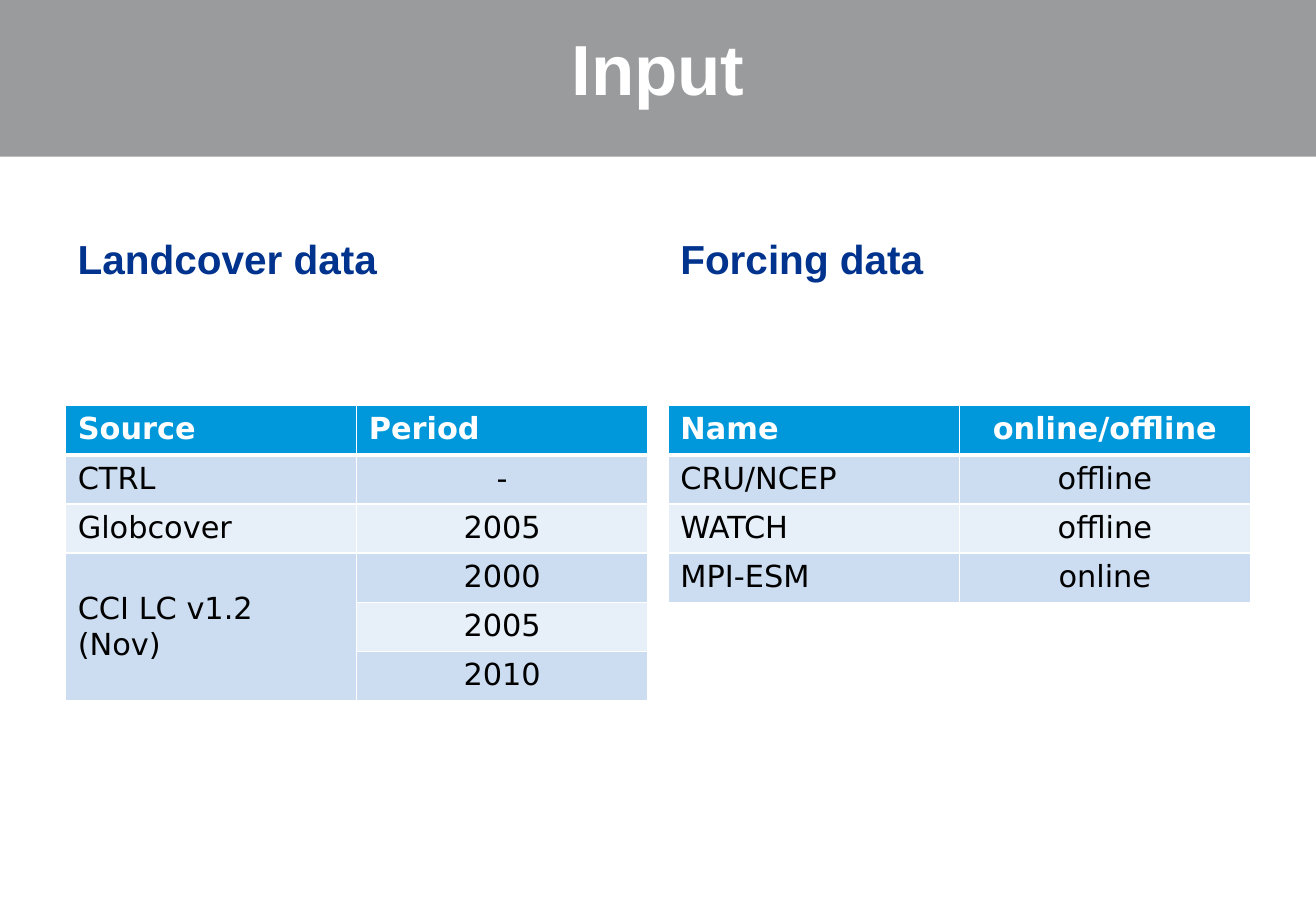
from dataclasses import dataclass

from lxml import etree
from pptx import Presentation
from pptx.dml.color import RGBColor
from pptx.enum.shapes import MSO_SHAPE
from pptx.enum.text import MSO_ANCHOR, PP_ALIGN
from pptx.oxml.ns import qn
from pptx.util import Inches, Pt

RECTANGLE = MSO_SHAPE.RECTANGLE
MIDDLE, BOTTOM = MSO_ANCHOR.MIDDLE, MSO_ANCHOR.BOTTOM
LEFT, CENTER = PP_ALIGN.LEFT, PP_ALIGN.CENTER


@dataclass(frozen=True)
class Theme:
    band: str = "9A9B9C"
    white: str = "FFFFFF"
    heading: str = "00338D"
    header_row: str = "0098DB"
    stripes: tuple = ("CCDDF1", "E7EFF8")
    body_text: str = "000000"
    title_font: str = "Arial"
    table_font: str = "DejaVu Sans"
    title_size: int = 42
    heading_size: int = 24
    table_size: int = 18
    thin_rule: int = 1
    thick_rule: int = 3


THEME = Theme()
SLIDE_W, SLIDE_H = 10.83, 7.5
MARGIN, GUTTER = 0.54, 0.17
COLUMN_W = (SLIDE_W - 2 * MARGIN - GUTTER) / 2
ROW_H = 0.405
HEADING_H, TABLE_OFFSET = 0.7, 1.66

LANDCOVER = [
    ("Source", "Period"),
    ("CTRL", "-"),
    ("Globcover", "2005"),
    ("CCI LC v1.2 (Nov)", "2000"),
    ("", "2005"),
    ("", "2010"),
]
FORCING = [
    ("Name", "online/offline"),
    ("CRU/NCEP", "offline"),
    ("WATCH", "offline"),
    ("MPI-ESM", "online"),
]


def style(paragraph, font_name, size, color, bold, align):
    paragraph.alignment = align
    font = paragraph.font
    font.name, font.size, font.bold = font_name, Pt(size), bold
    font.color.rgb = RGBColor.from_string(color)


def add_title(slide, text, left, top, width, height):
    """Place the title on a full-width band that starts at the slide's top."""
    band = slide.shapes.add_shape(RECTANGLE, 0, 0, Inches(SLIDE_W), Inches(1.29))
    band.shadow.inherit = False
    band.fill.solid()
    band.fill.fore_color.rgb = RGBColor.from_string(THEME.band)
    band.line.fill.background()
    slide.shapes._spTree.insert(2, band._element)

    title = slide.shapes.title
    title.left, title.top = Inches(left), Inches(top)
    title.width, title.height = Inches(width), Inches(height)
    title.text_frame.text = text
    title.text_frame.vertical_anchor = MIDDLE
    style(title.text_frame.paragraphs[0], THEME.title_font, THEME.title_size,
          THEME.white, True, CENTER)


def add_heading(slide, text, left, top, width):
    heading = slide.shapes.add_textbox(
        Inches(left), Inches(top), Inches(width), Inches(HEADING_H))
    frame = heading.text_frame
    frame.word_wrap = True
    frame.vertical_anchor = BOTTOM
    frame.text = text
    paragraph = frame.paragraphs[0]
    paragraph.line_spacing = 1.19
    style(paragraph, THEME.title_font, THEME.heading_size, THEME.heading, True, LEFT)


def rule_cell(cell, row):
    """Draw white cell borders, with a thick one under the header row."""
    thick_edge = {0: "lnB", 1: "lnT"}.get(row)
    properties = cell._tc.get_or_add_tcPr()
    for edge in ("lnL", "lnR", "lnT", "lnB"):
        points = THEME.thick_rule if edge == thick_edge else THEME.thin_rule
        line = etree.SubElement(properties, qn(f"a:{edge}"), w=str(Pt(points)))
        fill = etree.SubElement(line, qn("a:solidFill"))
        etree.SubElement(fill, qn("a:srgbClr"), val=THEME.white)


def add_data_table(slide, rows, left, top, width, centered_header):
    column_count = len(rows[0])
    table = slide.shapes.add_table(
        len(rows), column_count, Inches(left), Inches(top),
        Inches(width), Inches(ROW_H * len(rows))).table
    for column in table.columns:
        column.width = Inches(width / column_count)
    for r, values in enumerate(rows):
        table.rows[r].height = Inches(ROW_H)
        is_header = r == 0
        fill = THEME.header_row if is_header else THEME.stripes[(r - 1) % 2]
        color = THEME.white if is_header else THEME.body_text
        for c, value in enumerate(values):
            cell = table.cell(r, c)
            rule_cell(cell, r)
            cell.fill.solid()
            cell.fill.fore_color.rgb = RGBColor.from_string(fill)
            cell.text = value
            centered = c > 0 and (centered_header or not is_header)
            style(cell.text_frame.paragraphs[0], THEME.table_font, THEME.table_size,
                  color, is_header, CENTER if centered else LEFT)
    return table


def add_data_column(slide, heading, rows, left, top, width, centered_header=False):
    add_heading(slide, heading, left, top, width)
    return add_data_table(slide, rows, left, top + TABLE_OFFSET, width, centered_header)


def main():
    deck = Presentation()
    deck.slide_width, deck.slide_height = Inches(SLIDE_W), Inches(SLIDE_H)
    slide = deck.slides.add_slide(deck.slide_layouts[5])
    add_title(slide, "Input", MARGIN, -0.07, SLIDE_W - 2 * MARGIN, 1.25)

    top = 1.68
    landcover = add_data_column(slide, "Landcover data", LANDCOVER, MARGIN, top, COLUMN_W)
    land_cover_source = landcover.cell(3, 0)
    land_cover_source.merge(landcover.cell(5, 0))
    land_cover_source.vertical_anchor = MIDDLE
    add_data_column(slide, "Forcing data", FORCING, MARGIN + COLUMN_W + GUTTER, top,
                    COLUMN_W, centered_header=True)
    deck.save("out.pptx")


if __name__ == "__main__":
    main()
